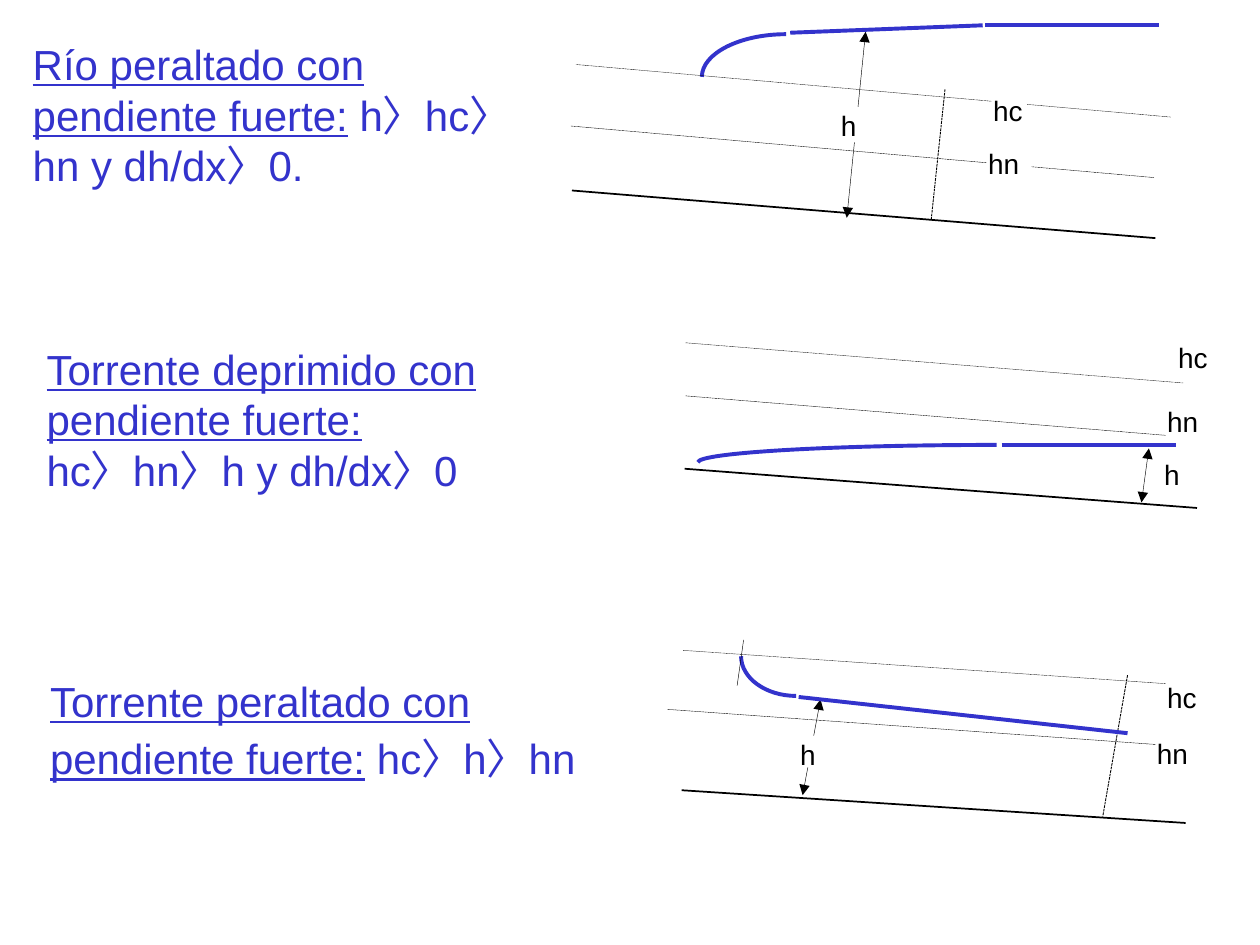
from lxml import etree
from pptx import Presentation
from pptx.dml.color import RGBColor
from pptx.enum.dml import MSO_LINE
from pptx.enum.shapes import MSO_CONNECTOR, MSO_SHAPE
from pptx.enum.text import MSO_ANCHOR
from pptx.oxml.ns import qn
from pptx.util import Cm, Pt

BLUE = RGBColor(0x33, 0x33, 0xCC)
BLACK = RGBColor(0, 0, 0)
WHITE = RGBColor(0xFF, 0xFF, 0xFF)
FONT = "Arial"
STRAIGHT = MSO_CONNECTOR.STRAIGHT
RECTANGLE = MSO_SHAPE.RECTANGLE
MIDDLE = MSO_ANCHOR.MIDDLE
DASH_DOT = MSO_LINE.DASH_DOT
DOT = MSO_LINE.ROUND_DOT
DASH = MSO_LINE.SQUARE_DOT
DASH_NAMES = {DASH_DOT: "sysDashDot", DOT: "sysDot", DASH: "sysDash"}
KAPPA = 0.55  # Bezier handle length for a quarter ellipse

# kind of line: colour, width in points, dash, arrowheads
LINE_STYLES = {
    "bed": (BLACK, 1, None, False),
    "normal": (BLACK, 0.25, DASH_DOT, False),
    "critical": (BLACK, 0.25, DOT, False),
    "section": (BLACK, 0.5, DASH, False),
    "start": (BLACK, 0.25, None, False),
    "depth": (BLACK, 0.25, None, True),
    "surface": (BLUE, 2.25, None, False),
}

# Lengths in cm; diagram parts are measured from the diagram's origin.
PROFILES = [
    {
        "text_box": (0.41, 0.64, 10.8, 3.33),
        "text": [[("Río peraltado con pendiente fuerte:", True, 24),
                  (" h〉hc〉hn y dh/dx〉0.", False, 24)]],
        "origin": (11.5, 0.5),
        "lines": [("bed", 0.03, 3.34, 11.79, 4.3),
                  ("normal", 0.01, 2.04, 11.77, 3.08),
                  ("critical", 0.11, 0.8, 12.1, 1.86),
                  ("section", 7.55, 1.3, 7.27, 3.95),
                  ("depth", 5.95, 0.14, 5.57, 3.89),
                  ("surface", 4.43, 0.16, 8.31, 0.01),
                  ("surface", 8.36, 0.01, 11.87, 0.01)],
        "curve": (4.35, 0.19, 2.65, 1.05),
        "labels": [("hc", 8.49, 1.35, 0.71, 0.64),
                   ("hn", 8.39, 2.42, 0.91, 0.71),
                   ("h", 5.42, 1.66, 0.66, 0.71)],
    },
    {
        "text_box": (0.69, 6.78, 9.7, 3.33),
        "text": [[("Torrente deprimido con pendiente fuerte:", True, 24)],
                 [("hc〉hn〉h y dh/dx〉0", False, 24)]],
        "origin": (13.8, 6.8),
        "lines": [("bed", 0, 2.65, 10.33, 3.44),
                  ("normal", 0.02, 1.18, 10.48, 2.04),
                  ("critical", 0.02, 0.11, 10.05, 0.92),
                  ("depth", 9.36, 2.24, 9.21, 3.33),
                  ("surface", 6.39, 2.17, 9.9, 2.17)],
        "curve": (6.29, 2.17, 0.27, 2.52),
        "labels": [("hc", 9.92, 0.03, 0.84, 0.69),
                   ("hn", 9.7, 1.33, 1.09, 0.76),
                   ("h", 9.64, 2.39, 0.81, 0.76)],
    },
    {
        "text_box": (0.76, 13.49, 11.81, 2.46),
        "text": [[("Torrente peraltado con pendiente fuerte:", True, 24),
                  (" hc〉h〉hn", False, 24), (" ", False, 28)]],
        "origin": (13.4, 12.9),
        "lines": [("bed", 0.34, 3.03, 10.5, 3.69),
                  ("normal", 0.06, 1.4, 10.35, 2.14),
                  ("critical", 0.37, 0.21, 10.22, 0.89),
                  ("section", 9.33, 0.71, 8.83, 3.56),
                  ("start", 1.59, 0, 1.46, 0.92),
                  ("depth", 3.14, 1.2, 2.78, 3.13),
                  ("surface", 2.7, 1.15, 9.33, 1.88)],
        "curve": (2.65, 1.13, 1.54, 0.33),
        "labels": [("hc", 10.1, 0.79, 0.81, 0.58),
                   ("hn", 9.89, 1.91, 1.07, 0.64),
                   ("h", 2.7, 1.93, 0.79, 0.64)],
    },
]


def add_run(paragraph, text, size, color, underline=False):
    run = paragraph.add_run()
    run.text = text
    run.font.name = FONT
    run.font.size = Pt(size)
    run.font.color.rgb = color
    run.font.underline = underline


def add_description(slide, box, paragraphs):
    frame = slide.shapes.add_textbox(*map(Cm, box)).text_frame
    frame.word_wrap = True
    frame.vertical_anchor = MIDDLE
    for index, runs in enumerate(paragraphs):
        paragraph = frame.add_paragraph() if index else frame.paragraphs[0]
        for text, underline, size in runs:
            add_run(paragraph, text, size, BLUE, underline)


def add_line(shapes, kind, x1, y1, x2, y2):
    color, width, dash, arrows = LINE_STYLES[kind]
    connector = shapes.add_connector(STRAIGHT, Cm(x1), Cm(y1), Cm(x2), Cm(y2))
    connector.line.color.rgb = color
    connector.line.width = Pt(width)
    properties = connector.line._get_or_add_ln()
    if dash:
        connector.line.dash_style = dash
        properties.find(qn("a:prstDash")).set("val", DASH_NAMES[dash])
    if arrows:
        for end in ("a:headEnd", "a:tailEnd"):
            etree.SubElement(properties, qn(end), type="triangle")
    etree.SubElement(connector._element.spPr, qn("a:effectLst"))


def add_curve(shapes, x1, y1, x2, y2):
    """Quarter ellipse, level at its first point and upright at its second."""
    handles = [(x1 + KAPPA * (x2 - x1), y1), (x2, y2 - KAPPA * (y2 - y1))]
    points = [(Cm(x), Cm(y)) for x, y in handles + [(x2, y2)]]
    builder = shapes.build_freeform(Cm(x1), Cm(y1))
    builder.add_line_segments(points, close=False)
    curve = builder.convert_to_shape()
    outline = next(curve._element.iter(qn("a:path")))
    bezier = etree.SubElement(outline, qn("a:cubicBezTo"))
    for segment in outline.findall(qn("a:lnTo")):
        bezier.append(segment[0])
        outline.remove(segment)
    curve.shadow.inherit = False
    curve.fill.solid()
    curve.fill.fore_color.rgb = WHITE
    curve.line.color.rgb = BLUE
    curve.line.width = Pt(2.25)


def add_label(shapes, text, *box):
    label = shapes.add_shape(RECTANGLE, *map(Cm, box))
    label.shadow.inherit = False
    label.fill.solid()
    label.fill.fore_color.rgb = WHITE
    label.line.fill.background()
    frame = label.text_frame
    frame.word_wrap = True
    frame.vertical_anchor = MSO_ANCHOR.TOP
    frame.margin_left = frame.margin_right = Cm(0.03)
    frame.margin_top = frame.margin_bottom = Cm(0.03)
    paragraph = frame.paragraphs[0]
    paragraph.alignment = 1
    add_run(paragraph, text, 16, BLACK)


def add_diagram(slide, origin, lines, curve, labels):
    left, top = origin
    shapes = slide.shapes.add_group_shape().shapes
    x1, y1, x2, y2 = curve
    add_curve(shapes, left + x1, top + y1, left + x2, top + y2)
    for kind, x1, y1, x2, y2 in lines:
        add_line(shapes, kind, left + x1, top + y1, left + x2, top + y2)
    for text, x, y, width, height in labels:
        add_label(shapes, text, left + x, top + y, width, height)


def main():
    presentation = Presentation()
    presentation.slide_width, presentation.slide_height = Cm(25.4), Cm(19.05)
    slide = presentation.slides.add_slide(presentation.slide_layouts[6])
    for profile in PROFILES:
        add_description(slide, profile["text_box"], profile["text"])
        add_diagram(slide, profile["origin"], profile["lines"],
                    profile["curve"], profile["labels"])
    presentation.save("out.pptx")


if __name__ == "__main__":
    main()
